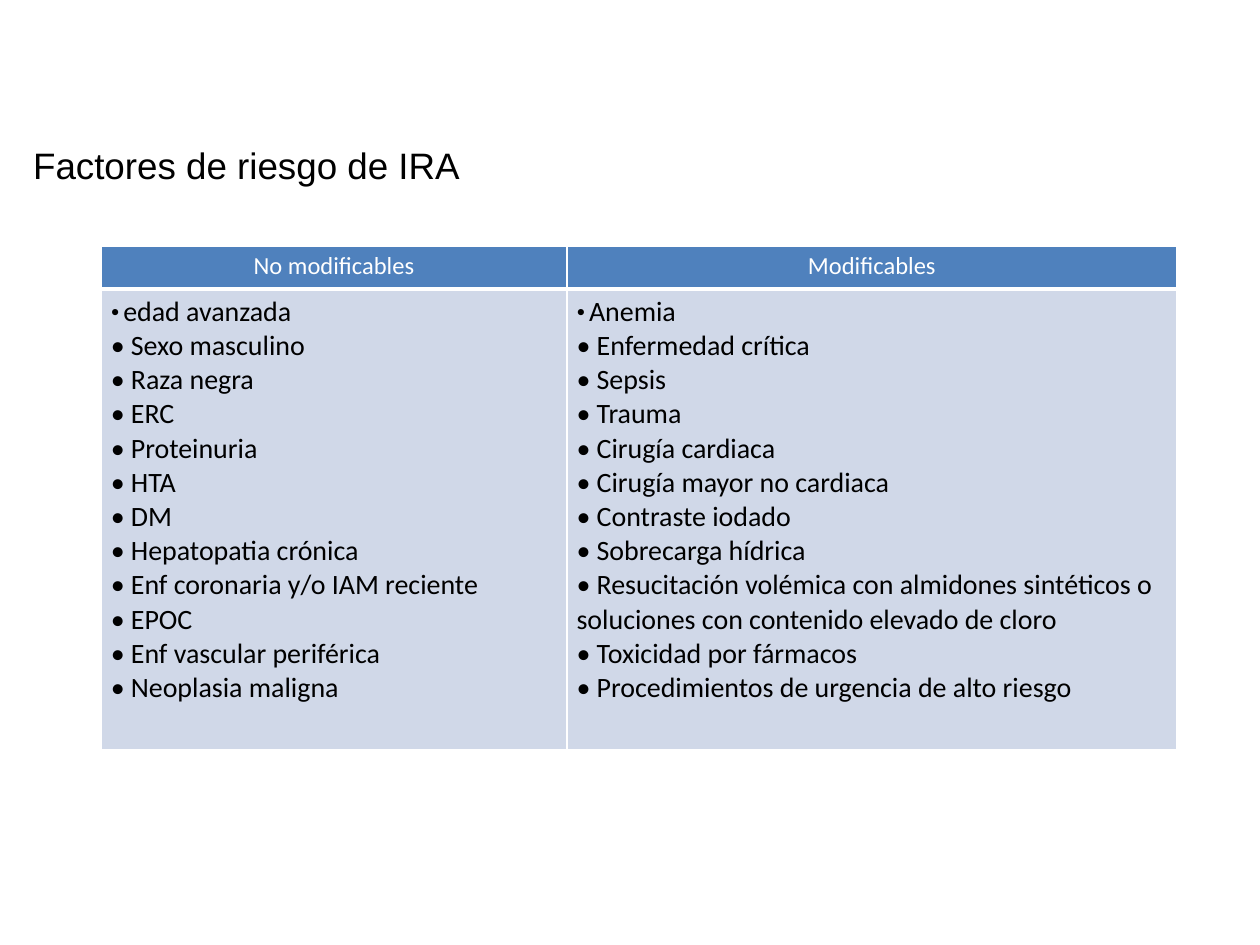
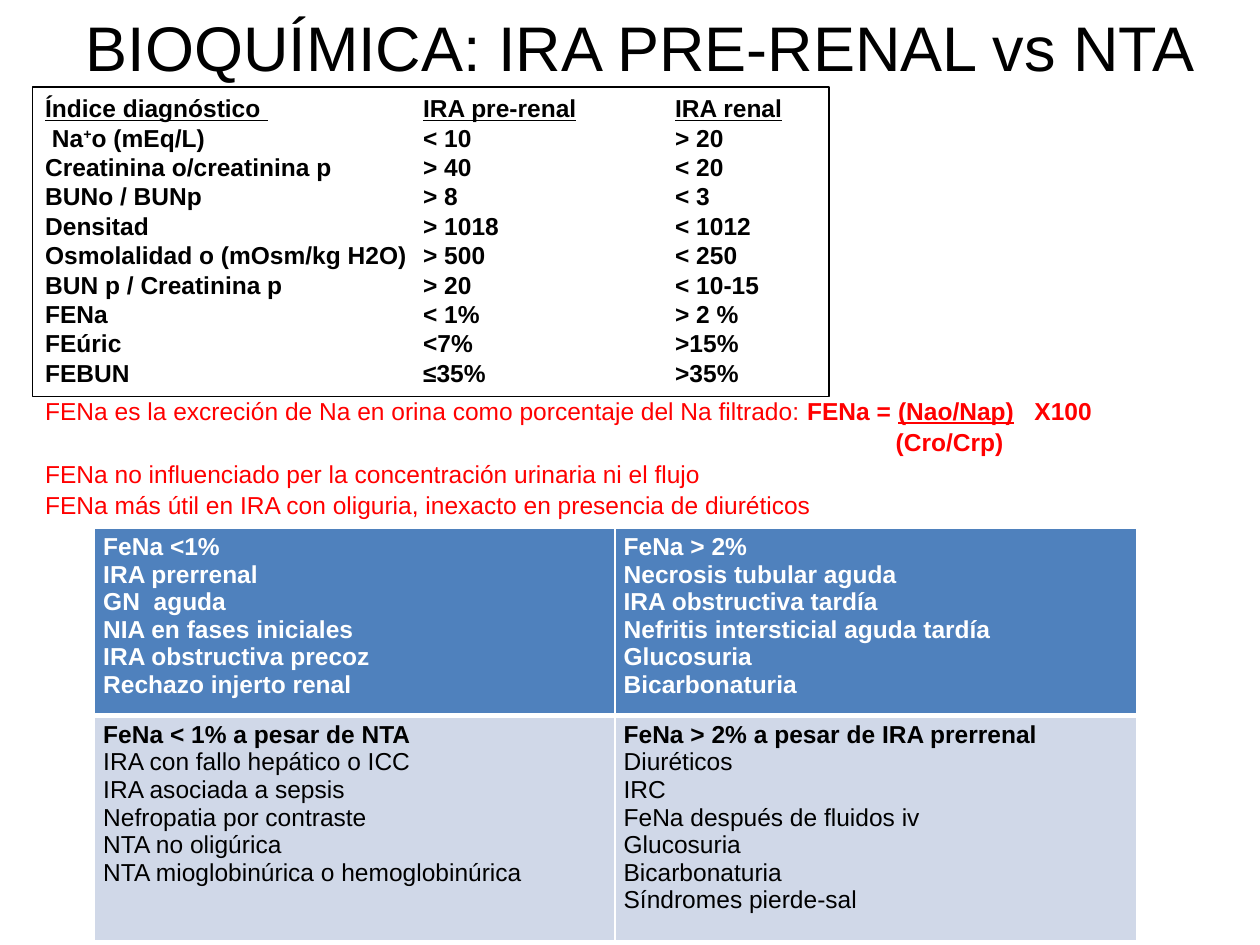
from pptx import Presentation
from pptx.dml.color import RGBColor
from pptx.enum.shapes import MSO_SHAPE
from pptx.enum.text import MSO_ANCHOR, MSO_AUTO_SIZE, PP_ALIGN
from pptx.oxml.ns import qn
from pptx.util import Pt
from lxml import etree

LEFT, CENTER = PP_ALIGN.LEFT, PP_ALIGN.CENTER
TOP, MIDDLE = MSO_ANCHOR.TOP, MSO_ANCHOR.MIDDLE
BLACK, WHITE, RED = "000000", "FFFFFF", "FF0000"
HEADER_BLUE, BODY_BLUE = "4F81BD", "D0D8E8"
TITLE_ONLY = 5

# ---- Content ----
RISK_TITLE = "Factores de riesgo de IRA"
RISK_FACTORS = {
    "No modificables": [
        "edad avanzada", "Sexo masculino", "Raza negra", "ERC", "Proteinuria",
        "HTA", "DM", "Hepatopatia crónica", "Enf coronaria y/o IAM reciente",
        "EPOC", "Enf vascular periférica", "Neoplasia maligna"],
    "Modificables": [
        "Anemia", "Enfermedad crítica", "Sepsis", "Trauma", "Cirugía cardiaca",
        "Cirugía mayor no cardiaca", "Contraste iodado", "Sobrecarga hídrica",
        "Resucitación volémica con almidones sintéticos o soluciones con "
        "contenido elevado de cloro",
        "Toxicidad por fármacos", "Procedimientos de urgencia de alto riesgo"],
}

BIOCHEM_TITLE = "BIOQUÍMICA: IRA PRE-RENAL vs NTA"
INDEX_HEADINGS = ("Índice diagnóstico ", "IRA pre-renal", "IRA renal")
INDEX_ROWS = [
    (" Na^+^o (mEq/L)", "< 10", "> 20"),  # ^ encloses a superscript
    ("Creatinina o/creatinina p", "> 40", "< 20"),
    ("BUNo / BUNp", "> 8", "< 3"),
    ("Densitad", "> 1018", "< 1012"),
    ("Osmolalidad o (mOsm/kg H2O)", "> 500", "< 250"),
    ("BUN p / Creatinina p", "> 20", "< 10-15"),
    ("FENa", "< 1%", "> 2 %"),
    ("FEúric", "<7%", ">15%"),
    ("FEBUN", "≤35%", ">35%"),
]
# Each line is a list of (text, style) runs
FENA_NOTES = [
    [("FENa es la excreción de Na en orina como porcentaje del Na filtrado: ", ""),
     ("FENa = ", "b"), ("(Nao/Nap)", "bu"), ("   X100", "b")],
    [("\t(Cro/Crp)", "b")],
    [("FENa no influenciado per la concentración urinaria ni el flujo", "")],
    [("FENa más útil en IRA con oliguria, inexacto en presencia de diuréticos", "")],
]
FENA_USUAL = [
    ["FeNa <1%", "IRA prerrenal", "GN  aguda", "NIA en fases iniciales",
     "IRA obstructiva precoz", "Rechazo injerto renal"],
    ["FeNa > 2%", "Necrosis tubular aguda", "IRA obstructiva tardía",
     "Nefritis intersticial aguda tardía", "Glucosuria", "Bicarbonaturia"],
]
FENA_EXCEPTIONS = [
    ["FeNa < 1% a pesar de NTA", "IRA con fallo hepático o ICC",
     "IRA asociada a sepsis", "Nefropatia por contraste", "NTA no oligúrica",
     "NTA mioglobinúrica o hemoglobinúrica"],
    ["FeNa > 2% a pesar de IRA prerrenal", "Diuréticos", "IRC",
     "FeNa después de fluidos iv", "Glucosuria", "Bicarbonaturia",
     "Síndromes pierde-sal"],
]


# ---- Shared helpers ----
def rgb(value):
    return RGBColor.from_string(value)


def set_font(font, size, color, name="Arial", bold=False):
    font.name, font.size, font.bold = name, Pt(size), bold
    font.color.rgb = rgb(color)


def paragraphs(frame, count):
    return [frame.paragraphs[0]] + [frame.add_paragraph() for _ in range(count - 1)]


def add_run(paragraph, text, style=""):
    """Style letters: b bold, u underline, s superscript."""
    run = paragraph.add_run()
    run.text = text
    if "b" in style:
        run.font.bold = True
    if "u" in style:
        run.font.underline = True
    if "s" in style:
        run._r.get_or_add_rPr().set("baseline", "30000")
    return run


def add_before_font(paragraph, element):
    # Bullets and tab stops must come before the default run properties
    properties = paragraph._p.get_or_add_pPr()
    default_font = properties.find(qn("a:defRPr"))
    if default_font is None:
        properties.append(element)
    else:
        default_font.addprevious(element)


def set_tabs(paragraph, *stops):
    tabs = etree.Element(qn("a:tabLst"))
    for stop in stops:
        etree.SubElement(tabs, qn("a:tab"), pos=str(Pt(stop)), algn="l")
    add_before_font(paragraph, tabs)


def add_bullet(paragraph, font_name):
    properties = paragraph._p.get_or_add_pPr()
    properties.set("marL", "0")
    properties.set("indent", "0")
    add_before_font(paragraph, etree.Element(qn("a:buFont"), typeface=font_name))
    add_before_font(paragraph, etree.Element(qn("a:buChar"), char="•"))


def add_titled_slide(deck, text, box, size, align, inset):
    slide = deck.slides.add_slide(deck.slide_layouts[TITLE_ONLY])
    title = slide.shapes.title
    title.left, title.top, title.width, title.height = map(Pt, box)
    frame = title.text_frame
    frame.text = text
    frame.margin_left = Pt(inset)
    frame.vertical_anchor = MIDDLE
    frame.auto_size = MSO_AUTO_SIZE.NONE
    frame.paragraphs[0].alignment = align
    set_font(frame.paragraphs[0].font, size, BLACK)
    return slide


def style_cell(cell, fill, side_inset, top_line, bottom_line):
    cell.margin_left = cell.margin_right = Pt(side_inset)
    cell.margin_top = cell.margin_bottom = Pt(3.2)
    cell.vertical_anchor = TOP
    properties = cell._tc.get_or_add_tcPr()
    for side, width in (("L", 1), ("R", 1), ("T", top_line), ("B", bottom_line)):
        line = etree.SubElement(properties, qn(f"a:ln{side}"), w=str(Pt(width)))
        paint = etree.SubElement(line, qn("a:solidFill"))
        etree.SubElement(paint, qn("a:srgbClr"), val=WHITE)
    cell.fill.solid()
    cell.fill.fore_color.rgb = rgb(fill)


def add_two_row_table(slide, left, top, widths, heights, side_inset):
    """A blue header row over a pale body row; returns both rows of cells."""
    table = slide.shapes.add_table(
        2, len(widths), Pt(left), Pt(top), Pt(sum(widths)), Pt(sum(heights))).table
    for column, width in zip(table.columns, widths):
        column.width = Pt(width)
    for row, height in zip(table.rows, heights):
        row.height = Pt(height)
    header, body = (list(row.cells) for row in table.rows)
    for cell in header:
        style_cell(cell, HEADER_BLUE, side_inset, 1, 3)
    for cell in body:
        style_cell(cell, BODY_BLUE, side_inset, 3, 1)
    return header, body


# ---- Slides ----
def build_risk_slide(deck):
    slide = add_titled_slide(deck, RISK_TITLE, (0, 67.7, 620.6, 53.3), 21, LEFT, 18.9)
    header, body = add_two_row_table(
        slide, 57.8, 140.6, (266.2, 348.5), (24.5, 263.5), 5.5)
    for heading_cell, list_cell, (heading, factors) in zip(
            header, body, RISK_FACTORS.items()):
        heading_cell.text = heading
        heading_line = heading_cell.text_frame.paragraphs[0]
        heading_line.alignment = CENTER
        set_font(heading_line.font, 14, WHITE, "Calibri")
        lines = paragraphs(list_cell.text_frame, len(factors))
        for number, (line, factor) in enumerate(zip(lines, factors)):
            set_font(line.font, 16, BLACK, "Calibri")
            add_bullet(line, "Calibri")
            gap = add_run(line, " ")
            add_run(line, factor)
            if number == 0:
                gap.font.size = Pt(10)


def add_index_box(slide):
    box = slide.shapes.add_shape(
        MSO_SHAPE.RECTANGLE, Pt(18.7), Pt(49.7), Pt(455), Pt(177))
    box.shadow.inherit = False
    box.fill.background()
    box.line.color.rgb = rgb(BLACK)
    box.line.width = Pt(0.75)
    frame = box.text_frame
    frame.word_wrap = True
    frame.vertical_anchor = TOP
    lines = paragraphs(frame, len(INDEX_ROWS) + 1)
    for line in lines:
        line.alignment = LEFT
        set_font(line.font, 14, BLACK, bold=True)
        set_tabs(line, 216, 360)
    for number, heading in enumerate(INDEX_HEADINGS):
        if number:
            add_run(lines[0], "\t")
        add_run(lines[0], heading, "u")
    for line, row in zip(lines[1:], INDEX_ROWS):
        for number, part in enumerate("\t".join(row).split("^")):
            add_run(line, part, "s" if number % 2 else "")


def add_fena_notes(slide):
    notes = slide.shapes.add_textbox(Pt(18.7), Pt(224.6), Pt(634.3), Pt(78.5))
    frame = notes.text_frame
    frame.word_wrap = True
    for line, runs in zip(paragraphs(frame, len(FENA_NOTES)), FENA_NOTES):
        line.line_spacing = 0.9
        line.space_before = Pt(2.8)
        set_font(line.font, 14, RED)
        set_tabs(line, 486)
        for text, style in runs:
            add_run(line, text, style)


def build_biochem_slide(deck):
    slide = add_titled_slide(
        deck, BIOCHEM_TITLE, (24.4, 0, 683.3, 52.6), 36, CENTER, 7.2)
    add_index_box(slide)
    add_fena_notes(slide)
    header, body = add_two_row_table(
        slide, 54, 301.7, (297.4, 298), (105.8, 128.9), 5)
    for cells, lists, color in ((header, FENA_USUAL, WHITE),
                                (body, FENA_EXCEPTIONS, BLACK)):
        for cell, causes in zip(cells, lists):
            lines = paragraphs(cell.text_frame, len(causes))
            for number, (line, cause) in enumerate(zip(lines, causes)):
                line.text = cause
                set_font(line.font, 14, color, bold=cells is header or number == 0)


def main():
    deck = Presentation()
    deck.slide_width, deck.slide_height = Pt(720), Pt(540)
    build_risk_slide(deck)
    build_biochem_slide(deck)
    deck.save("out.pptx")


if __name__ == "__main__":
    main()
